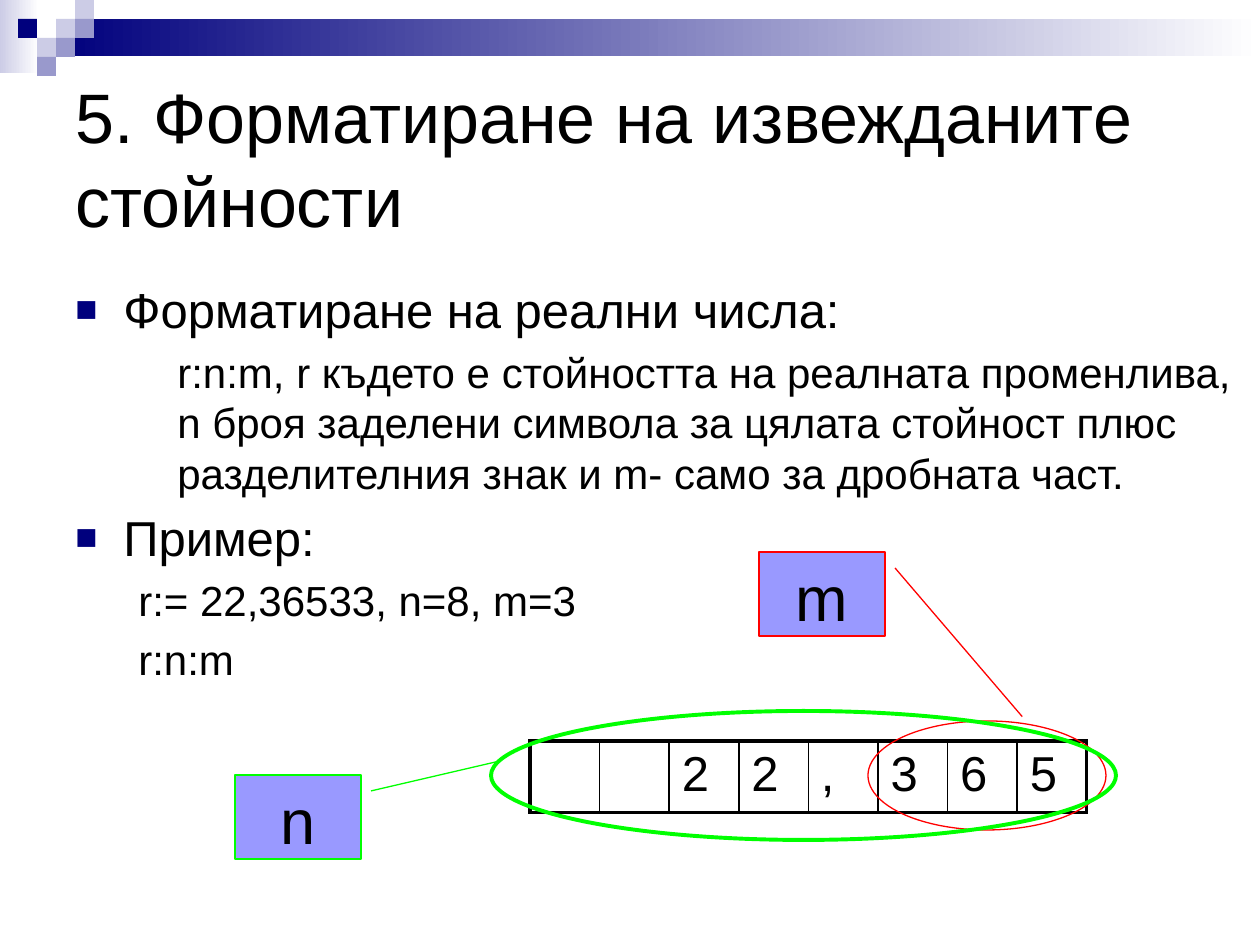
from lxml import etree
from pptx import Presentation
from pptx.dml.color import RGBColor
from pptx.enum.shapes import MSO_SHAPE
from pptx.enum.text import MSO_ANCHOR, PP_ALIGN
from pptx.oxml.ns import qn
from pptx.util import Emu, Pt

RECT, OVAL, CALLOUT = MSO_SHAPE.RECTANGLE, MSO_SHAPE.OVAL, MSO_SHAPE.LINE_CALLOUT_1
MIDDLE, TOP = MSO_ANCHOR.MIDDLE, MSO_ANCHOR.TOP
CENTER = PP_ALIGN.CENTER

FONT = "Arial"
C = {"black": "000000", "white": "FFFFFF", "navy": "00007D", "pale": "CCCCE6",
     "mid": "9999CC", "box": "9999FF", "red": "FF0000", "green": "00FF00"}

# Content, lengths in px (126 to the inch)
TITLE = "5. Форматиране на извежданите стойности"
BODY = [  # level, text
    (0, "Форматиране на реални числа:"),
    (1, "\tr:n:m, r където е стойността на реалната променлива, n броя заделени "
        "символа за цялата стойност плюс разделителния знак и m- само за дробната част."),
    (0, "Пример:"),
    (1, "r:= 22,36533, n=8, m=3"),
    (1, "r:n:m"),
]
LEVELS = [  # size pt, left margin, first-line indent, bullet
    (28, 48, -48, "■"),
    (24, 102, -39, None),
]
DIGITS = ["", "", "2", "2", ",", "3", "6", "5"]
BANDS = [((0, 0, 39, 73), "pale"), ((57, 19, 1203, 37), "navy")]
TILE = 19
TILES = [  # column, row, colour
    (3, 1, "pale"), (4, 0, "pale"), (4, 1, "mid"), (2, 2, "pale"),
    (1, 1, "navy"), (3, 2, "mid"), (2, 3, "mid"),
]
OVALS = [((868, 721, 238, 109), "red", 0.75), ((491, 711, 625, 129), "green", 2.25)]
CALLOUTS = [  # text, box, line colour, pointer (y1, x1, y2, x2)
    ("n", (235, 775, 126, 84), "green", (0.19, 1.08, -0.17, 2.11)),
    ("m", (759, 552, 126, 84), "red", (0.19, 1.08, 1.96, 2.09)),
]


def px(n):
    return Emu(round(n * 914400 / 126))


def rgb(name):
    return RGBColor.from_string(C[name])


def style(p, size):
    for r in p.runs:
        r.font.name, r.font.size = FONT, Pt(size)
        r.font.color.rgb = rgb("black")


def add_shape(kind, box, fill=None, line=None, width=0.75):
    sp = s.shapes.add_shape(kind, *map(px, box))
    sp.shadow.inherit = False
    if fill:
        sp.fill.solid()
        sp.fill.fore_color.rgb = rgb(fill)
    else:
        sp.fill.background()
    if line:
        sp.line.color.rgb = rgb(line)
        sp.line.width = Pt(width)
    else:
        sp.line.fill.background()
    return sp


def add_text(box, anchor):
    tf = s.shapes.add_textbox(*map(px, box)).text_frame
    tf.word_wrap = True
    tf.vertical_anchor = anchor
    return tf


def set_level(p, level):
    size, margin, indent, bullet = LEVELS[level]
    style(p, size)
    p.space_before = Pt(size * 0.2)
    pPr = p._p.get_or_add_pPr()
    pPr.set("marL", str(px(margin)))
    pPr.set("indent", str(px(indent)))
    if not bullet:
        etree.SubElement(pPr, qn("a:buNone"))
        return
    color = etree.SubElement(pPr, qn("a:buClr"))
    etree.SubElement(color, qn("a:srgbClr"), val=C["navy"])
    etree.SubElement(pPr, qn("a:buSzPct"), val="75000")
    etree.SubElement(pPr, qn("a:buFont"), typeface=FONT)
    etree.SubElement(pPr, qn("a:buChar"), char=bullet)


def set_border(cell, side, width):
    ln = etree.SubElement(cell._tc.get_or_add_tcPr(), qn("a:ln" + side), w=str(Pt(width)))
    fill = etree.SubElement(ln, qn("a:solidFill"))
    etree.SubElement(fill, qn("a:srgbClr"), val=C["black"])


prs = Presentation()
prs.slide_width, prs.slide_height = px(1260), px(945)
s = prs.slides.add_slide(prs.slide_layouts[6])

# Header decoration
for box, color in BANDS:
    fill = add_shape(RECT, box, color).fill
    fill.gradient()
    fill.gradient_angle = 0
    for stop, name in zip(fill.gradient_stops, (color, "white")):
        stop.color.rgb = rgb(name)
for col, row, color in TILES:
    add_shape(RECT, (col * TILE - 1, row * TILE, TILE, TILE), color)

# Title and body
tf = add_text((63, 63, 1134, 189), MIDDLE)
tf.text = TITLE
style(tf.paragraphs[0], 40)

tf = add_text((63, 273, 1197, 626), TOP)
for i, (level, text) in enumerate(BODY):
    p = tf.add_paragraph() if i else tf.paragraphs[0]
    p.text = text
    set_level(p, level)

# Row of character cells
last = len(DIGITS) - 1
frame = s.shapes.add_table(1, len(DIGITS), px(530), px(741), px(557), px(67))
table = frame.table
table.first_row = table.horz_banding = False
for i, digit in enumerate(DIGITS):
    cell = table.cell(0, i)
    cell.text = digit
    style(cell.text_frame.paragraphs[0], 28)
    set_border(cell, "L", 2.25 if i == 0 else 1)
    set_border(cell, "R", 2.25 if i == last else 1)
    set_border(cell, "T", 2.25)
    set_border(cell, "B", 2.25)
    cell.fill.background()

# Rings around the digits and their callouts
for box, color, width in OVALS:
    add_shape(OVAL, box, line=color, width=width)
for text, box, color, pointer in CALLOUTS:
    sp = add_shape(CALLOUT, box, "box", color)
    for i, value in enumerate(pointer):
        sp.adjustments[i] = value
    tf = sp.text_frame
    tf.text = text
    tf.vertical_anchor = TOP
    tf.paragraphs[0].alignment = CENTER
    style(tf.paragraphs[0], 36)

prs.save("out.pptx")
